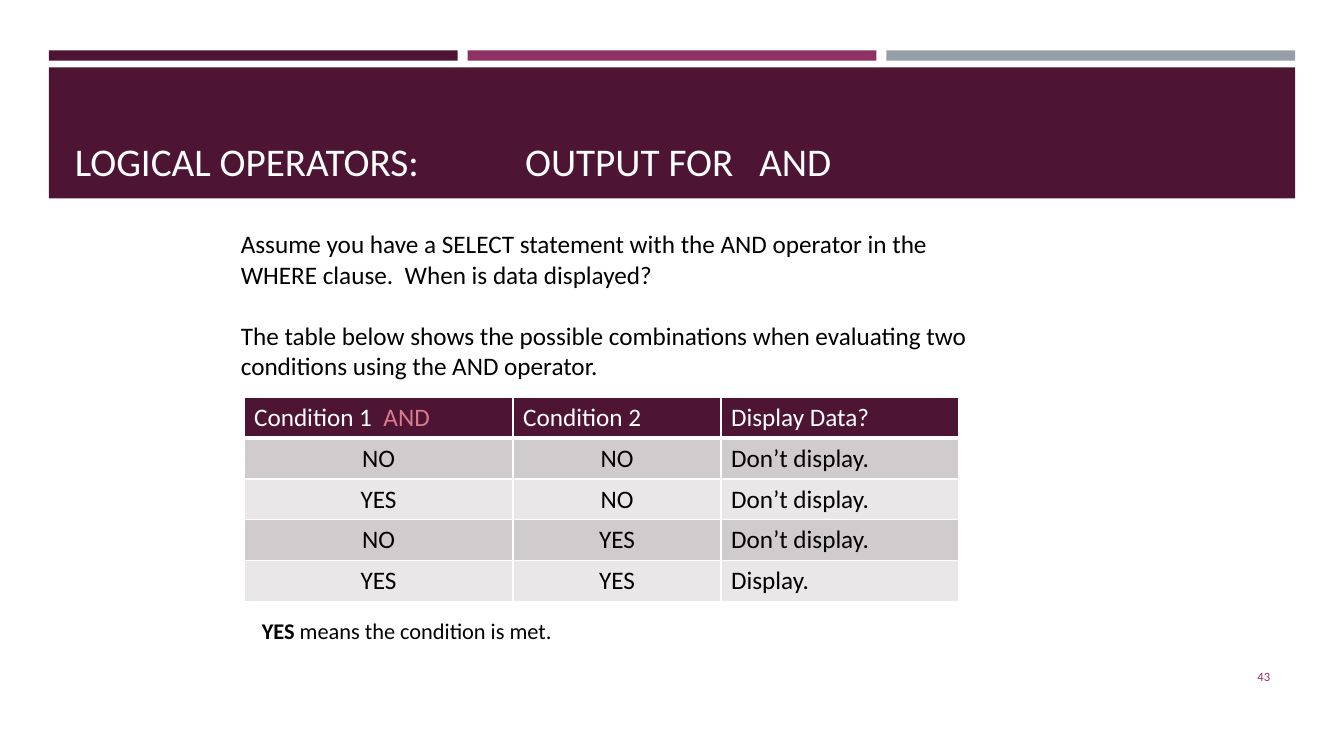
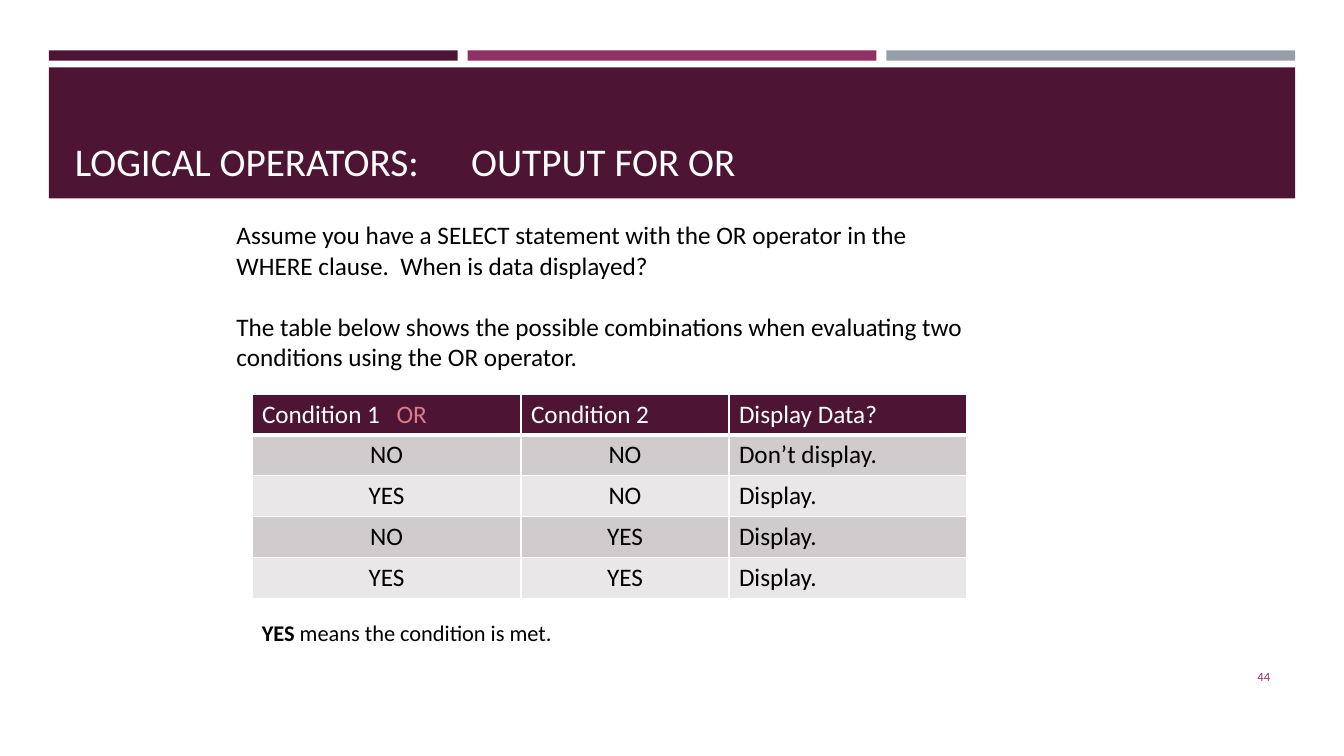
"""Build two slides on the results of the logical operators AND and OR."""
from lxml import etree
from pptx import Presentation
from pptx import util as u
from pptx.dml.color import RGBColor
from pptx.enum import shapes, text
from pptx.oxml import ns

FONT = "Calibri"
COLORS = {
    "plum": "4D1434",
    "magenta": "903163",
    "gray": "969FA7",
    "rose": "DA7B8D",
    "row_dark": "D0CCCE",
    "row_light": "E9E7E8",
    "white": "FFFFFF",
    "black": "000000",
}
COLUMN_WIDTHS = (6.78, 5.24, 5.99)
ROW_HEIGHT = 1.03
CONDITIONS = (("NO", "NO"), ("YES", "NO"), ("NO", "YES"), ("YES", "YES"))

SLIDES = (
    {
        "title": "LOGICAL OPERATORS:\tOUTPUT FOR\tAND",
        "title_tabs": (11.35, 17.25),
        "operator": "AND",
        "operator_tab": 3.26,
        "results": ("Don’t display.", "Don’t display.", "Don’t display.", "Display."),
        "intro_box": (5.82, 5.64, 19.25, 4.11),
        "table_corner": (6.15, 10.01),
        "note_box": (6.35, 15.42, 17.58, 0.94),
        "number": 43,
    },
    {
        "title": "LOGICAL OPERATORS:\tOUTPUT FOR OR",
        "title_tabs": (9.99,),
        "operator": "OR",
        "operator_tab": 3.39,
        "results": ("Don’t display.", "Display.", "Display.", "Display."),
        "intro_box": (5.71, 5.41, 19.25, 4.11),
        "table_corner": (6.35, 9.93),
        "note_box": (6.35, 15.47, 17.58, 0.94),
        "number": 44,
    },
)


def lengths(*values):
    """Convert centimetres to slide lengths."""
    return [u.Cm(value) for value in values]


def format_run(run, size, color, bold=False):
    """Set the font of a run."""
    run.font.name = FONT
    run.font.size = u.Pt(size)
    run.font.bold = bold
    run.font.color.rgb = RGBColor.from_string(COLORS[color])


def set_tabs(paragraph, positions):
    """Give a paragraph left tab stops at the positions in centimetres."""
    properties = paragraph._p.get_or_add_pPr()
    tab_list = etree.SubElement(properties, ns.qn("a:tabLst"))
    for position in positions:
        etree.SubElement(tab_list, ns.qn("a:tab"), pos=str(u.Cm(position)), algn="l")


def add_bar(slide, box, color):
    """Add a plain filled rectangle."""
    bar = slide.shapes.add_shape(shapes.MSO_SHAPE.RECTANGLE, *lengths(*box))
    bar.shadow.inherit = False
    bar.fill.solid()
    bar.fill.fore_color.rgb = RGBColor.from_string(COLORS[color])
    bar.line.fill.background()


def add_text(slide, box, paragraphs, size, color):
    """Add a wrapping text box with one font and return its text frame."""
    frame = slide.shapes.add_textbox(*lengths(*box)).text_frame
    frame.word_wrap = True
    frame.text = "\n".join(paragraphs)
    for paragraph in frame.paragraphs:
        for run in paragraph.runs:
            format_run(run, size, color)
    return frame


def add_header(slide, title_text, tabs, box=(1.23, 1.27, 31.41, 3.73)):
    """Draw the three bands and the title panel, and set the title on it."""
    left, top, width, height = box
    gap, band_height, panel_offset = 0.25, 0.26, 0.43
    band_width = (width - 2 * gap) / 3
    for index, color in enumerate(("plum", "magenta", "gray")):
        band_left = left + index * (band_width + gap)
        add_bar(slide, (band_left, top, band_width, band_height), color)
    add_bar(slide, (left, top + panel_offset, width, height - panel_offset), "plum")

    title = slide.shapes.title
    title.element.getparent().append(title.element)
    title.left, title.top, title.width, title.height = lengths(
        left + 0.4, top + 0.69, width - 0.78, height - 0.91)
    frame = title.text_frame
    frame.text = title_text
    frame.word_wrap = True
    frame.auto_size = text.MSO_AUTO_SIZE.NONE
    frame.vertical_anchor = text.MSO_ANCHOR.BOTTOM
    paragraph = frame.paragraphs[0]
    paragraph.alignment = text.PP_ALIGN.LEFT
    set_tabs(paragraph, tabs)
    format_run(paragraph.runs[0], 28, "white")


def add_number(slide, number, box=(29.34, 16.54, 2.92, 1.02)):
    """Add the slide number at the lower right."""
    frame = add_text(slide, box, [str(number)], 9, "magenta")
    frame.vertical_anchor = text.MSO_ANCHOR.MIDDLE
    frame.paragraphs[0].alignment = text.PP_ALIGN.RIGHT


def add_intro(slide, box, operator):
    """Add the two paragraphs that introduce the table."""
    frame = add_text(slide, box, (
        f"Assume you have a SELECT statement with the {operator} operator in the "
        "WHERE clause.  When is data displayed?",
        "The table below shows the possible combinations when evaluating two "
        f"conditions using the {operator} operator.",
    ), 18, "black")
    frame.paragraphs[1].space_before = u.Pt(22)


def add_note(slide, box):
    """Add the note that explains YES."""
    frame = add_text(slide, box, ["YES"], 16, "black")
    paragraph = frame.paragraphs[0]
    paragraph.runs[0].font.bold = True
    explanation = paragraph.add_run()
    explanation.text = " means the condition is met."
    format_run(explanation, 16, "black")


def set_borders(cell, top, bottom):
    """Draw white cell borders with the given top and bottom widths in points."""
    properties = cell._tc.get_or_add_tcPr()
    for index, (side, width) in enumerate((("L", 1), ("R", 1), ("T", top), ("B", bottom))):
        line = etree.Element(ns.qn(f"a:ln{side}"), w=str(u.Pt(width)))
        fill = etree.SubElement(line, ns.qn("a:solidFill"))
        etree.SubElement(fill, ns.qn("a:srgbClr"), val=COLORS["white"])
        properties.insert(index, line)


def add_truth_table(slide, corner, operator, operator_tab, results):
    """Add the table of conditions and results."""
    rows = [(f"Condition 1\t", "Condition 2", "Display Data?")]
    rows += [(*pair, result) for pair, result in zip(CONDITIONS, results)]
    size = (sum(COLUMN_WIDTHS), ROW_HEIGHT * len(rows))
    table = slide.shapes.add_table(
        len(rows), len(COLUMN_WIDTHS), *lengths(*corner, *size)).table
    for column, width in zip(table.columns, COLUMN_WIDTHS):
        column.width = u.Cm(width)
    for row_index, values in enumerate(rows):
        table.rows[row_index].height = u.Cm(ROW_HEIGHT)
        is_header = row_index == 0
        fill = "plum" if is_header else ("row_light", "row_dark")[row_index % 2]
        for column_index, value in enumerate(values):
            cell = table.cell(row_index, column_index)
            cell.fill.solid()
            cell.fill.fore_color.rgb = RGBColor.from_string(COLORS[fill])
            set_borders(cell, 3 if row_index == 1 else 1, 3 if is_header else 1)
            paragraph = cell.text_frame.paragraphs[0]
            paragraph.text = value
            if not is_header and column_index < 2:
                paragraph.alignment = text.PP_ALIGN.CENTER
            format_run(paragraph.runs[0], 18, "white" if is_header else "black")

    heading = table.cell(0, 0).text_frame.paragraphs[0]
    set_tabs(heading, [operator_tab])
    operator_run = heading.add_run()
    operator_run.text = operator
    format_run(operator_run, 18, "rose")


def add_operator_slide(presentation, content):
    """Add the slide for one logical operator."""
    slide = presentation.slides.add_slide(presentation.slide_layouts[5])
    add_header(slide, content["title"], content["title_tabs"])
    add_number(slide, content["number"])
    add_truth_table(slide, content["table_corner"], content["operator"],
                    content["operator_tab"], content["results"])
    add_intro(slide, content["intro_box"], content["operator"])
    add_note(slide, content["note_box"])


def main():
    """Build and save the presentation."""
    presentation = Presentation()
    presentation.slide_width, presentation.slide_height = lengths(33.87, 19.05)
    for content in SLIDES:
        add_operator_slide(presentation, content)
    presentation.save("out.pptx")


if __name__ == "__main__":
    main()
